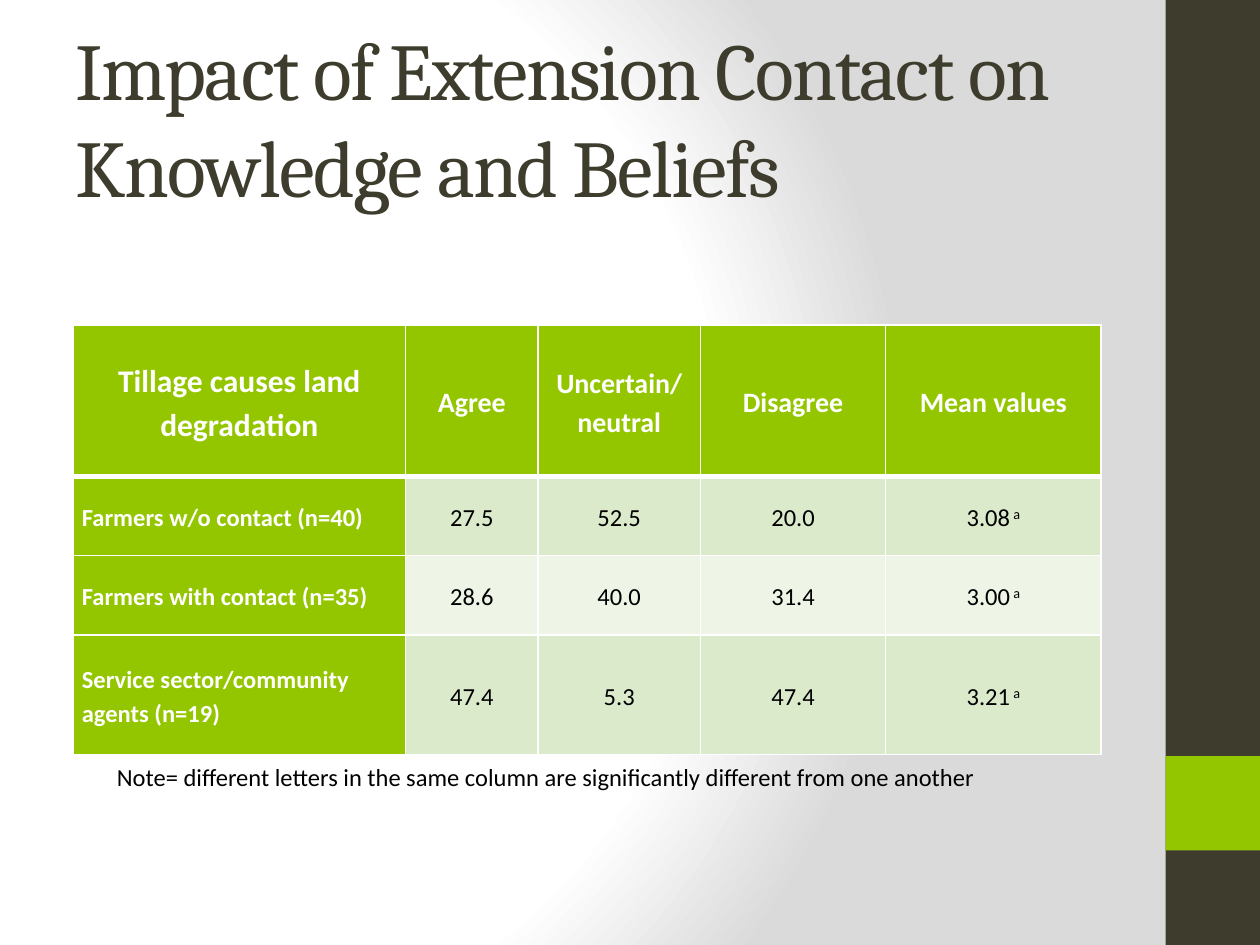
import pptx
import pptx.dml.color
import pptx.enum.shapes
import pptx.enum.text
import pptx.oxml
import pptx.oxml.ns
import pptx.util
from pptx.util import Inches

COLORS = {
    "dark": "3E3D2D",
    "green": "94C600",
    "band": "DCEACC",
    "light_band": "EEF5E7",
    "white": "FFFFFF",
    "gray": "DADADA",
    "black": "000000",
}
HEADING_FONT, BODY_FONT = "Cambria", "Calibri"

HEADERS = ["Tillage causes land degradation", "Agree", "Uncertain/ neutral",
           "Disagree", "Mean values"]
ROWS = [
    ["Farmers w/o contact (n=40)", "27.5", "52.5", "20.0", "3.08"],
    ["Farmers with contact (n=35)", "28.6", "40.0", "31.4", "3.00"],
    ["Service sector/community agents (n=19)", "47.4", "5.3", "47.4", "3.21"],
]
MEAN_LETTER = " a"
COLUMN_WIDTHS = [2.64, 1.05, 1.29, 1.47, 1.71]
ROW_HEIGHTS = [1.2, 0.63, 0.63, 0.95]


def rgb(name):
    return pptx.dml.color.RGBColor.from_string(COLORS[name])


def format_run(run, size, color, font=BODY_FONT, bold=False):
    run.font.size = pptx.util.Pt(size)
    run.font.name = font
    run.font.bold = bold
    run.font.color.rgb = rgb(color)


def set_background(slide):
    stops = "".join(
        f'<a:gs pos="{position * 1000}"><a:srgbClr val="{COLORS[name]}"/></a:gs>'
        for position, name in [(0, "white"), (75, "white"), (100, "gray")])
    background = pptx.oxml.parse_xml(
        f'<p:bg {pptx.oxml.ns.nsdecls("p", "a")}><p:bgPr>'
        f'<a:gradFill rotWithShape="1"><a:gsLst>{stops}</a:gsLst>'
        '<a:path path="circle">'
        '<a:fillToRect l="20000" t="50000" r="100000" b="50000"/></a:path>'
        '</a:gradFill><a:effectLst/></p:bgPr></p:bg>')
    slide.element.cSld.insert(0, background)


def add_block(slide, left, top, width, height, color):
    block = slide.shapes.add_shape(
        pptx.enum.shapes.MSO_SHAPE.RECTANGLE,
        Inches(left), Inches(top), Inches(width), Inches(height))
    block.shadow.inherit = False
    block.fill.solid()
    block.fill.fore_color.rgb = rgb(color)
    block.line.fill.background()


def add_text(slide, left, top, width, height, text, anchor):
    box = slide.shapes.add_textbox(
        Inches(left), Inches(top), Inches(width), Inches(height))
    box.text_frame.word_wrap = True
    box.text_frame.vertical_anchor = anchor
    box.text_frame.text = text
    return box.text_frame.paragraphs[0].runs[0]


def set_borders(cell, top, bottom):
    """Draw white cell borders; top and bottom are widths in points."""
    properties = cell._tc.get_or_add_tcPr()
    sides = [("lnL", 1), ("lnR", 1), ("lnT", top), ("lnB", bottom)]
    for index, (side, width) in enumerate(sides):
        properties.insert(index, pptx.oxml.parse_xml(
            f'<a:{side} {pptx.oxml.ns.nsdecls("a")} w="{pptx.util.Pt(width)}">'
            f'<a:solidFill><a:srgbClr val="{COLORS["white"]}"/></a:solidFill>'
            f'</a:{side}>'))


def fill_cell(cell, text, fill, size, color, bold, centered):
    cell.fill.solid()
    cell.fill.fore_color.rgb = rgb(fill)
    cell.vertical_anchor = pptx.enum.text.MSO_ANCHOR.MIDDLE
    cell.margin_left = cell.margin_right = Inches(0.07)
    cell.margin_top = cell.margin_bottom = 0
    cell.text_frame.text = text
    paragraph = cell.text_frame.paragraphs[0]
    paragraph.line_spacing = 1.15
    if centered:
        paragraph.alignment = pptx.enum.text.PP_ALIGN.CENTER
    format_run(paragraph.runs[0], size, color, bold=bold)
    return paragraph


def add_belief_table(slide):
    table = slide.shapes.add_table(
        len(ROW_HEIGHTS), len(COLUMN_WIDTHS), Inches(0.58), Inches(2.58),
        Inches(sum(COLUMN_WIDTHS)), Inches(sum(ROW_HEIGHTS))).table
    for column, width in zip(table.columns, COLUMN_WIDTHS):
        column.width = Inches(width)
    for row, height in zip(table.rows, ROW_HEIGHTS):
        row.height = Inches(height)

    # Header row
    for column, text in enumerate(HEADERS):
        cell = table.cell(0, column)
        fill_cell(cell, text, "green", 16 if column else 18, "white", True, True)
        set_borders(cell, top=1, bottom=3)

    # Group names and banded values
    for row, texts in enumerate(ROWS, start=1):
        band = "band" if row % 2 else "light_band"
        for column, text in enumerate(texts):
            cell = table.cell(row, column)
            if column == 0:
                fill_cell(cell, text, "green", 14, "white", True, False)
            else:
                paragraph = fill_cell(cell, text, band, 14, "black", False, True)
                if column == len(texts) - 1:
                    letter = paragraph.add_run()
                    letter.text = MEAN_LETTER
                    format_run(letter, 14, "black")
                    letter.font._element.set("baseline", "30000")
            set_borders(cell, top=3 if row == 1 else 1, bottom=1)


def main():
    presentation = pptx.Presentation()
    presentation.slide_width = Inches(10)
    presentation.slide_height = Inches(7.5)
    slide = presentation.slides.add_slide(presentation.slide_layouts[6])

    # Background and side bar
    set_background(slide)
    add_block(slide, 9.25, 0, 0.75, 7.5, "dark")
    add_block(slide, 9.25, 6, 0.75, 0.75, "green")

    # Title
    title = add_text(slide, 0.5, 0.3, 8.33, 1.25,
                     "Impact of Extension Contact on Knowledge and Beliefs",
                     pptx.enum.text.MSO_ANCHOR.MIDDLE)
    format_run(title, 46, "dark", HEADING_FONT)
    title.font._element.set("spc", "-100")

    # Table and note
    add_belief_table(slide)
    note = add_text(slide, 0.83, 6, 7.5, 0.34,
                    "Note= different letters in the same column are "
                    "significantly different from one another",
                    pptx.enum.text.MSO_ANCHOR.TOP)
    format_run(note, 14, "black")

    presentation.save("out.pptx")


if __name__ == "__main__":
    main()
